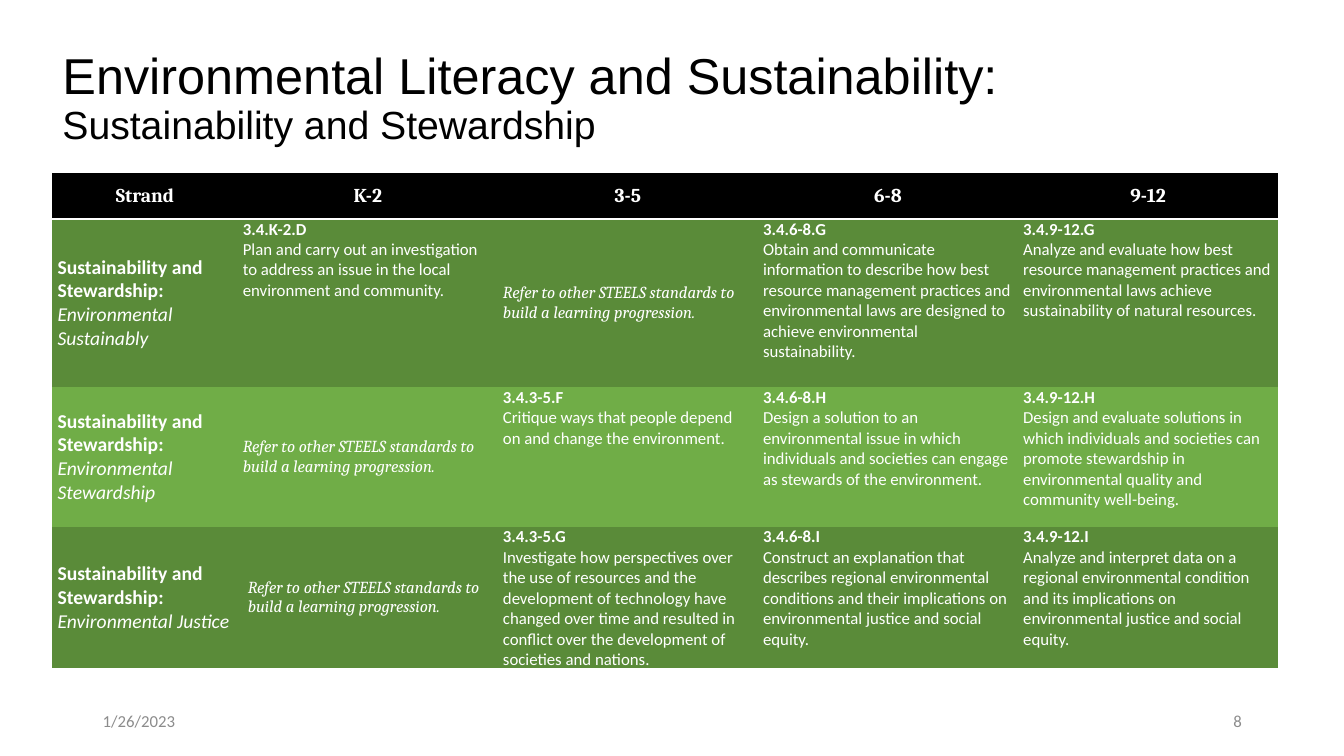
import lxml.etree
import pptx
import pptx.dml.color
import pptx.enum.text
import pptx.oxml
import pptx.oxml.ns
import pptx.util
from pptx.util import Cm

ALIGN = pptx.enum.text.PP_ALIGN
MIDDLE = pptx.enum.text.MSO_ANCHOR.MIDDLE
TOP = pptx.enum.text.MSO_ANCHOR.TOP
WHITE, BLACK, GREY = "FFFFFF", "000000", "8C8C8C"
DARK_GREEN, LIGHT_GREEN = "5A8B39", "70AD47"
PLAIN_TABLE_STYLE = "{2D5ABB26-0587-4C30-8999-92F81FD0307C}"

GRADES = ["Strand", "K-2", "3-5", "6-8", "9-12"]
STRAND = "Sustainability and Stewardship:"
REFER = "Refer to other STEELS standards to build a learning progression."
# Each strand: its topic, then (code, standard) per grade band; None refers elsewhere
STRANDS = [
    ("Environmental Sustainably", [
        ("3.4.K-2.D", "Plan and carry out an investigation to address an issue in the "
                      "local environment and community."),
        None,
        ("3.4.6-8.G", "Obtain and communicate information to describe how best resource "
                      "management practices and environmental laws are designed to "
                      "achieve environmental sustainability."),
        ("3.4.9-12.G", "Analyze and evaluate how best resource management practices and "
                       "environmental laws achieve sustainability of natural resources."),
    ]),
    ("Environmental Stewardship", [
        None,
        ("3.4.3-5.F", "Critique ways that people depend on and change the environment."),
        ("3.4.6-8.H", "Design a solution to an environmental issue in which individuals "
                      "and societies can engage as stewards of the environment."),
        ("3.4.9-12.H", "Design and evaluate solutions in which individuals and societies "
                       "can promote stewardship in environmental quality and community "
                       "well-being."),
    ]),
    ("Environmental Justice", [
        None,
        ("3.4.3-5.G", "Investigate how perspectives over the use of resources and the "
                      "development of technology have changed over time and resulted in "
                      "conflict over the development of societies and nations."),
        ("3.4.6-8.I", "Construct an explanation that describes regional environmental "
                      "conditions and their implications on environmental justice and "
                      "social equity."),
        ("3.4.9-12.I", "Analyze and interpret data on a regional environmental condition "
                       "and its implications on environmental justice and social equity."),
    ]),
]


def rgb(color):
    return pptx.dml.color.RGBColor.from_string(color)


def style(font, size, name, color, bold=False, italic=False):
    font.size, font.name = pptx.util.Pt(size), name
    font.bold, font.italic = bold, italic
    font.color.rgb = rgb(color)


def add_title(slide, left, top, width, height):
    title = slide.shapes.title
    title.left, title.top, title.width, title.height = left, top, width, height
    title.text_frame.vertical_anchor = MIDDLE
    heading = title.text_frame.paragraphs[0]
    heading.alignment, heading.line_spacing = ALIGN.LEFT, 0.9
    subject = heading.add_run()
    subject.text = "Environmental Literacy and Sustainability: "
    style(subject.font, 36, "Arial", BLACK)
    heading.add_line_break()
    topic = heading.add_run()
    topic.text = "Sustainability and Stewardship"
    style(topic.font, 28, "Arial", BLACK)


def add_footer(slide, text, alignment, left, top, width, height):
    frame = slide.shapes.add_textbox(left, top, width, height).text_frame
    frame.word_wrap, frame.vertical_anchor = True, MIDDLE
    line = frame.paragraphs[0]
    line.text, line.alignment = text, alignment
    style(line.font, 12, "Calibri", GREY)


def fill_cell(cell, fill, anchor, lines, alignment=ALIGN.LEFT, tight=True):
    """Write lines of (text, size, font, bold, italic) into a filled cell."""
    cell.fill.solid()
    cell.fill.fore_color.rgb = rgb(fill)
    cell.vertical_anchor = anchor
    if tight:
        cell.margin_left = cell.margin_right = Cm(0.13)
        cell.margin_top = cell.margin_bottom = 0
    cell.text = "\n".join(line[0] for line in lines)
    for paragraph, (_, size, font, bold, italic) in zip(cell.text_frame.paragraphs, lines):
        paragraph.alignment = alignment
        style(paragraph.font, size, font, WHITE, bold, italic)


def underline_cell(cell):
    border = pptx.oxml.parse_xml(
        f'<a:lnB {pptx.oxml.ns.nsdecls("a")} w="25400"><a:solidFill>'
        f'<a:srgbClr val="{WHITE}"/></a:solidFill></a:lnB>')
    cell._tc.get_or_add_tcPr().insert(0, border)


def add_standards(slide, left, top, width, height):
    table = slide.shapes.add_table(
        len(STRANDS) + 1, len(GRADES), left, top, width, height).table
    table._tbl.tblPr.find(pptx.oxml.ns.qn("a:tableStyleId")).text = PLAIN_TABLE_STYLE
    strand_width = Cm(4.67)
    grade_width = (width - strand_width) // (len(GRADES) - 1)
    for index, column in enumerate(table.columns):
        column.width = grade_width if index else strand_width
    for row, row_height in zip(table.rows, (1.17, 4.24, 3.52, 3.52)):
        row.height = Cm(row_height)

    # Grade bands
    for index, grade in enumerate(GRADES):
        cell = table.cell(0, index)
        fill_cell(cell, BLACK, MIDDLE, [(grade, 14, "Cambria", True, False)],
                  ALIGN.CENTER, tight=False)
        underline_cell(cell)

    # Strands and their standards
    for row, (topic, standards) in enumerate(STRANDS, 1):
        fill = DARK_GREEN if row % 2 else LIGHT_GREEN
        fill_cell(table.cell(row, 0), fill, MIDDLE,
                  [(STRAND, 14, "Calibri", True, False),
                   (topic, 14, "Calibri", False, True)])
        for column, standard in enumerate(standards, 1):
            cell = table.cell(row, column)
            if standard:
                code, text = standard
                fill_cell(cell, fill, TOP, [(code, 12, "Calibri", True, False),
                                            (text, 12, "Calibri", False, False)])
            else:
                fill_cell(cell, fill, MIDDLE, [(REFER, 12, "Cambria", False, True)],
                          tight=row < len(STRANDS))


def main():
    deck = pptx.Presentation()
    deck.slide_width, deck.slide_height = Cm(33.87), Cm(19.05)
    slide = deck.slides.add_slide(deck.slide_layouts[5])
    add_title(slide, Cm(1.32), Cm(0.66), Cm(29.21), Cm(3.68))
    add_footer(slide, "1/26/2023", ALIGN.LEFT, Cm(2.34), Cm(17.65), Cm(7.62), Cm(1.02))
    add_footer(slide, "8", ALIGN.RIGHT, Cm(23.93), Cm(17.65), Cm(7.62), Cm(1.02))
    add_standards(slide, Cm(1.32), Cm(4.35), Cm(30.89), Cm(12.45))
    deck.save("out.pptx")


if __name__ == "__main__":
    main()
